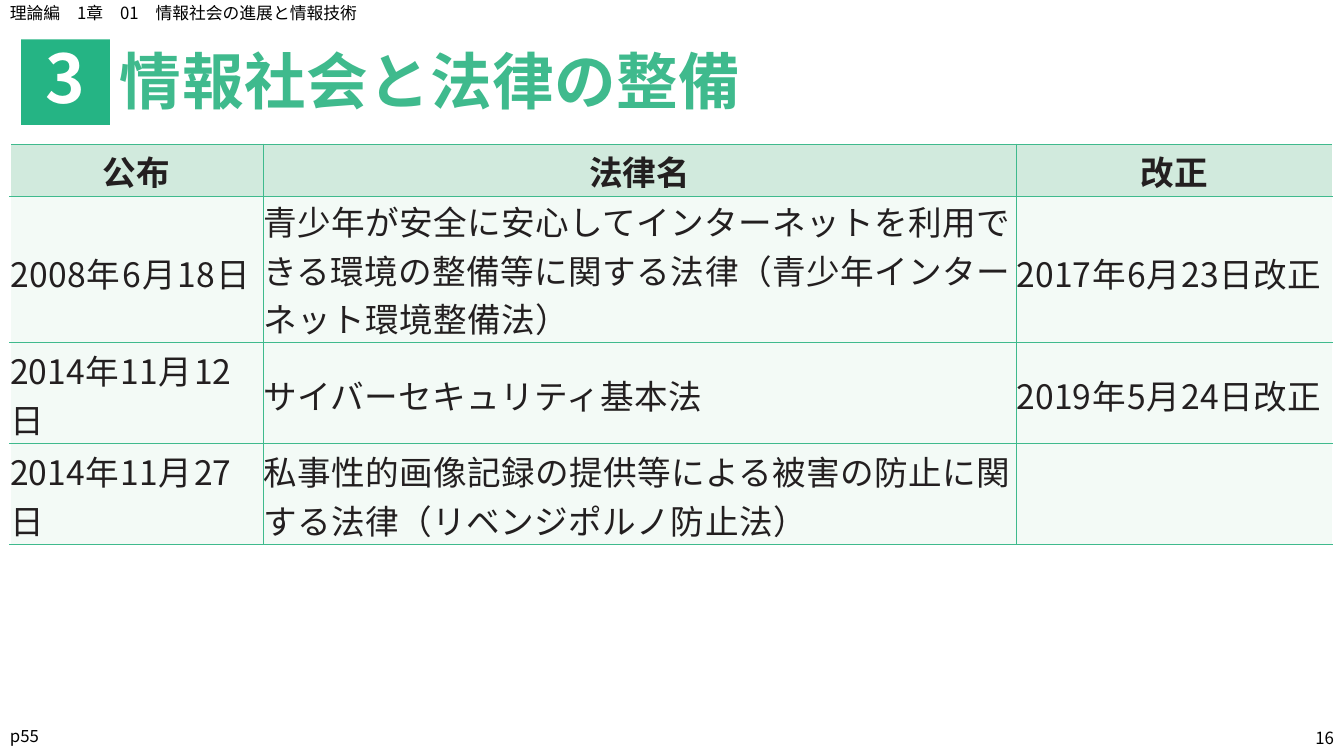
"""Build the slide listing laws for the information society."""
from dataclasses import dataclass

from lxml.etree import SubElement
from pptx import Presentation
from pptx.dml.color import RGBColor
from pptx.enum.shapes import MSO_SHAPE as Shape
from pptx.enum.text import MSO_ANCHOR as Anchor, MSO_AUTO_SIZE as AutoSize, PP_ALIGN as Align
from pptx.oxml.ns import qn
from pptx.util import Inches, Pt

BLACK = RGBColor(0x00, 0x00, 0x00)
WHITE = RGBColor(0xFF, 0xFF, 0xFF)
INK = RGBColor(0x23, 0x1F, 0x20)
GREEN = RGBColor(0x3F, 0xBA, 0x8D)
BADGE_GREEN = RGBColor(0x25, 0xB4, 0x84)
HEADER_FILL = RGBColor(0xD1, 0xEA, 0xDD)
BODY_FILL = RGBColor(0xF3, 0xFA, 0xF6)
JAPANESE = "Noto Sans CJK JP"


@dataclass(frozen=True)
class Span:
    text: str
    spacing: float = 0.0


@dataclass(frozen=True)
class Style:
    size: float
    color: RGBColor = BLACK
    bold: bool = False
    align: Align = Align.LEFT
    anchor: Anchor = Anchor.MIDDLE
    line: float = 0.9
    font: str = JAPANESE


@dataclass(frozen=True)
class Label:
    text: str
    left: float
    top: float
    width: float
    height: float
    style: Style


@dataclass(frozen=True)
class Row:
    height: float
    margins: tuple[float, ...]
    cells: tuple[list[Span], ...]
    style: Style
    fill: RGBColor


def date(year: str, month: str, day: str, ending: Span,
         spacings: tuple[float, ...] = (0.2, 0.2, 0.2)) -> list[Span]:
    return [Span(year, spacings[0]), Span("年", 1.1), Span(month, spacings[1]),
            Span("月", 1.1), Span(day, spacings[2]), ending]


def law(opening: str, alias: str) -> list[Span]:
    return [Span(opening, 0.3), Span("律", -2.9), Span(alias, 0.3)]


DAY = Span("日", 0.3)
REVISED = Span("日改正", 0.3)
HEADING = Style(24, INK, True, Align.CENTER, line=1.0)
ENTRY = Style(24, INK, line=1.0)
COLUMNS = (2.51, 7.47, 3.14)
ROWS = (
    Row(0.52, (0.02,) * 3, tuple([Span(name, 0.1)] for name in ("公布", "法律名", "改正")),
        HEADING, HEADER_FILL),
    Row(1.45, (0.07, 0, 0.07), (
        date("2008", "6", "18", Span("日", 1.1), (0.4, 0.9, 0.6)),
        law("青少年が安全に安心してインターネットを利用できる環境の整備等に関する法",
            "（青少年インターネット環境整備法）"),
        date("2017", "6", "23", REVISED)), ENTRY, BODY_FILL),
    Row(1.0, (0.03,) * 3, (
        date("2014", "11", "12", DAY),
        [Span("サイバーセキュリティ基本法", 0.3)],
        date("2019", "5", "24", REVISED)), ENTRY, BODY_FILL),
    Row(1.0, (0.03,) * 3, (
        date("2014", "11", "27", DAY),
        law("私事性的画像記録の提供等による被害の防止に関する法", "（リベンジポルノ防止法）"),
        []), ENTRY, BODY_FILL),
)
SMALL = Style(12)
LABELS = (
    Label("理論編\u30001章\u300001\u3000情報社会の進展と情報技術".replace("\u3000", "　"),
          0, 0, 9.59, 0.28, Style(12, anchor=Anchor.TOP)),
    Label("p55", 0, 7.15, 4.4, 0.33, SMALL),
    Label("16", 10.33, 7.15, 3, 0.33, Style(12, align=Align.RIGHT, line=1.0)),
)
TITLE = Label("情報社会と法律の整備", 1.09, 0.37, 11.95, 0.94,
              Style(44, GREEN, True, font="Lato"))
BADGE = Label("3", 0.21, 0.39, 0.88, 0.85, Style(48, WHITE, True, Align.CENTER))


def frame(label: Label) -> tuple[int, ...]:
    return tuple(Inches(n) for n in (label.left, label.top, label.width, label.height))


def write(text_frame, spans: list[Span], style: Style) -> None:
    para = text_frame.paragraphs[0]
    para.alignment = style.align
    para.line_spacing = style.line
    para.space_before = Pt(0)
    font = para.font
    font.size, font.bold, font.name = Pt(style.size), style.bold, style.font
    font.color.rgb = style.color
    SubElement(para._p.pPr.find(qn("a:defRPr")), qn("a:ea"), typeface=JAPANESE)
    for span in spans:
        run = para.add_run()
        run.text = span.text
        if span.spacing:
            run._r.get_or_add_rPr().set("spc", str(round(span.spacing * 100)))


def fill_label(box, label: Label, spacing: float = 0.0) -> None:
    box.left, box.top, box.width, box.height = frame(label)
    text_frame = box.text_frame
    text_frame.word_wrap = True
    text_frame.auto_size = AutoSize.NONE
    text_frame.vertical_anchor = label.style.anchor
    write(text_frame, [Span(label.text, spacing)], label.style)


def add_border(cell, side: str) -> None:
    line = SubElement(cell._tc.get_or_add_tcPr(), qn(f"a:ln{side}"), w=str(Pt(0.75)))
    SubElement(SubElement(line, qn("a:solidFill")), qn("a:srgbClr"), val=str(GREEN))


def add_laws(page) -> None:
    height = sum(row.height for row in ROWS)
    table = page.shapes.add_table(len(ROWS), len(COLUMNS), Inches(0.1), Inches(1.43),
                                  Inches(sum(COLUMNS)), Inches(height)).table
    table.first_row = table.horz_banding = False
    for column, width in zip(table.columns, COLUMNS):
        column.width = Inches(width)
    for index, row in enumerate(ROWS):
        table.rows[index].height = Inches(row.height)
        for cell, spans, margin, sides in zip(table.rows[index].cells, row.cells,
                                              row.margins, ("RTB", "LRTB", "LTB")):
            cell.margin_left = cell.margin_right = cell.margin_bottom = 0
            cell.margin_top = Inches(margin)
            cell.vertical_anchor = row.style.anchor
            for side in sides:
                add_border(cell, side)
            cell.fill.solid()
            cell.fill.fore_color.rgb = row.fill
            write(cell.text_frame, spans, row.style)


def main() -> None:
    deck = Presentation()
    deck.slide_width, deck.slide_height = Inches(13.33), Inches(7.5)
    page = deck.slides.add_slide(deck.slide_layouts[5])
    fill_label(page.shapes.title, TITLE, 0.3)
    for label in LABELS:
        fill_label(page.shapes.add_textbox(*frame(label)), label)
    badge = page.shapes.add_shape(Shape.RECTANGLE, *frame(BADGE))
    badge.shadow.inherit = False
    badge.fill.solid()
    badge.fill.fore_color.rgb = BADGE_GREEN
    badge.line.fill.background()
    fill_label(badge, BADGE)
    add_laws(page)
    deck.save("out.pptx")


if __name__ == "__main__":
    main()
